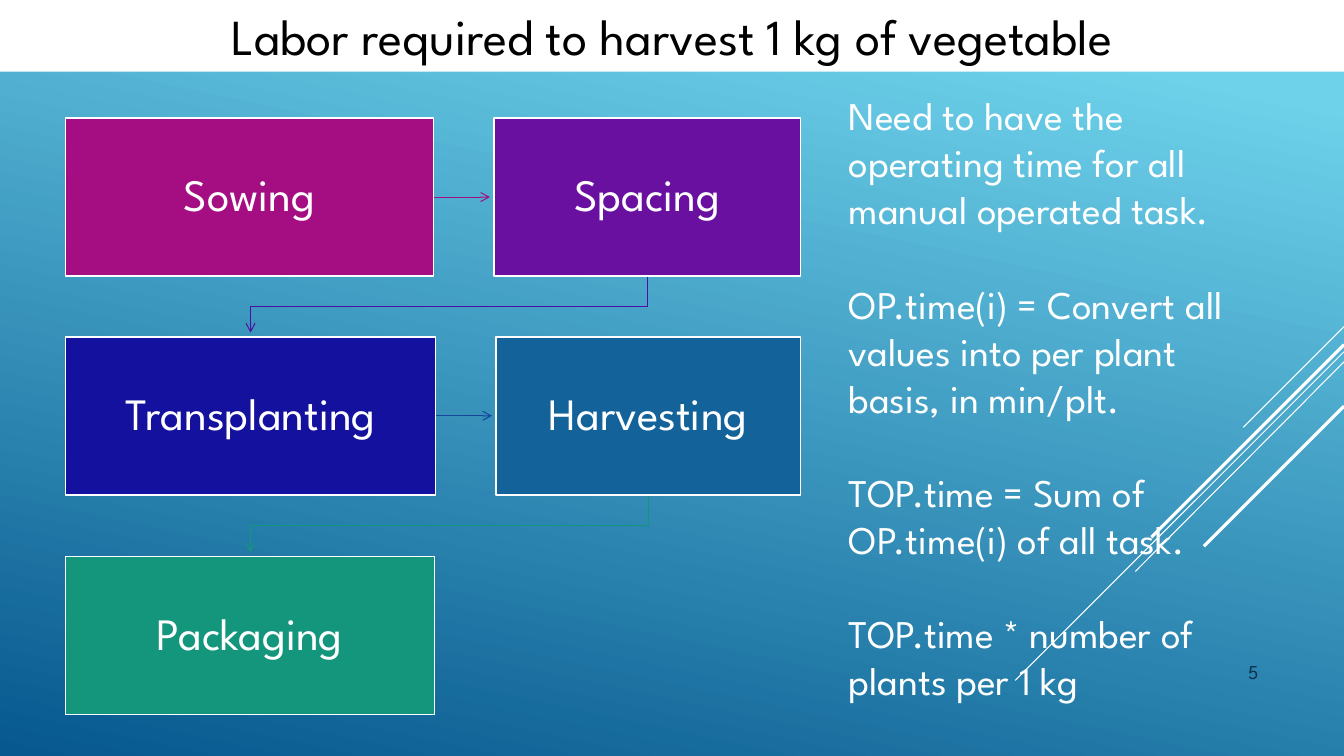
"""Build the slide on labor required to harvest 1 kg of vegetable."""
from dataclasses import dataclass
from itertools import pairwise

import pptx
import pptx.dml.color
import pptx.enum.shapes
import pptx.enum.text
import pptx.oxml
import pptx.oxml.ns
import pptx.util
from pptx.util import Inches

ANCHOR = pptx.enum.text.MSO_ANCHOR
ALIGN = pptx.enum.text.PP_ALIGN


@dataclass(frozen=True)
class Theme:
    font: str = "League Spartan"
    white: str = "FFFFFF"
    black: str = "000000"
    number: str = "0A304A"
    sky: str = "6ED2EB"
    deep: str = "06588E"
    title_size: int = 36
    task_size: int = 32
    method_size: int = 28
    number_size: int = 14
    outline: float = 1.25
    thin: float = 0.75
    thick: float = 2.25


@dataclass(frozen=True)
class Task:
    name: str
    left: float
    top: float
    width: float
    fill: str
    arrow: str = ""
    height: float = 1.57

    @property
    def center(self) -> float:
        return self.left + self.width / 2

    @property
    def right(self) -> float:
        return self.left + self.width

    @property
    def bottom(self) -> float:
        return self.top + self.height


@dataclass(frozen=True)
class Ray:
    start_y: float
    end_x: float
    end_y: float
    weight: float


THEME = Theme()
SLIDE_WIDTH, SLIDE_HEIGHT = 13.33, 7.5
ARROW_GAP = 0.04
TASKS = [
    Task("Sowing", 0.65, 1.17, 3.65, "A50E82", "A50E82"),
    Task("Spacing", 4.9, 1.17, 3.04, "6A10A1", "4D10A0"),
    Task("Transplanting", 0.65, 3.34, 3.67, "13119D", "12479B"),
    Task("Harvesting", 4.92, 3.34, 3.02, "13639A", "14967C"),
    Task("Packaging", 0.65, 5.52, 3.66, "14967C"),
]
RAYS = [
    Ray(3.24, 12.33, 4.24, THEME.thin),
    Ray(3.49, 10.07, 6.75, THEME.thin),
    Ray(3.59, 11.26, 5.67, THEME.thin),
    Ray(3.42, 11.42, 5.33, THEME.thick),
    Ray(4.03, 11.94, 5.42, THEME.thick),
]
METHOD = [
    "Need to have the operating time for all manual operated task.",
    "OP.time(i) = Convert all values into per plant basis, in min/plt.",
    "TOP.time = Sum of OP.time(i) of all task.",
    "TOP.time * number of plants per 1 kg",
]


def rgb(value: str) -> pptx.dml.color.RGBColor:
    """Turn a hex string into a colour."""
    return pptx.dml.color.RGBColor.from_string(value)


def write(shape, lines: list[str], size: int, color: str, align, anchor,
          gap: float = 0) -> None:
    """Fill a shape with formatted paragraphs, gap points apart."""
    frame = shape.text_frame
    frame.text = "\n".join(lines)
    frame.word_wrap = True
    frame.auto_size = pptx.enum.text.MSO_AUTO_SIZE.NONE
    frame.vertical_anchor = anchor
    for index, para in enumerate(frame.paragraphs):
        para.alignment = align
        para.space_before = pptx.util.Pt(gap if index else 0)
        for span in para.runs:
            span.font.name = THEME.font
            span.font.size = pptx.util.Pt(size)
            span.font.color.rgb = rgb(color)


def style_line(shape, color: str, weight: float, arrow: bool = False) -> None:
    """Set a line's colour and weight, drop its shadow and add an arrowhead."""
    shape.line.color.rgb = rgb(color)
    shape.line.width = pptx.util.Pt(weight)
    properties = shape.element.spPr
    if properties.find(pptx.oxml.ns.qn("a:effectLst")) is None:
        properties.append(pptx.oxml.parse_xml(
            f'<a:effectLst {pptx.oxml.ns.nsdecls("a")}/>'))
    if arrow:
        properties.find(pptx.oxml.ns.qn("a:ln")).append(pptx.oxml.parse_xml(
            f'<a:tailEnd {pptx.oxml.ns.nsdecls("a")} type="arrow"/>'))


def add_line(slide, start: tuple[float, float], end: tuple[float, float],
             color: str, weight: float, arrow: bool = False) -> None:
    """Draw a straight line."""
    line = slide.shapes.add_connector(
        pptx.enum.shapes.MSO_CONNECTOR.STRAIGHT,
        *(Inches(value) for value in start + end))
    style_line(line, color, weight, arrow)


def add_arrow(slide, source: Task, target: Task) -> None:
    """Link two tasks, straight within a row and bent between rows."""
    if source.top == target.top:
        middle = source.top + source.height / 2
        add_line(slide, (source.right, middle), (target.left - ARROW_GAP, middle),
                 source.arrow, THEME.thin, True)
        return
    middle = (source.bottom + target.top) / 2
    builder = slide.shapes.build_freeform(Inches(source.center), Inches(source.bottom))
    corners = [(source.center, middle), (target.center, middle),
               (target.center, target.top - ARROW_GAP)]
    builder.add_line_segments([(Inches(x), Inches(y)) for x, y in corners], close=False)
    bend = builder.convert_to_shape()
    bend.fill.background()
    style_line(bend, source.arrow, THEME.thin, True)


def add_task(slide, task: Task) -> None:
    """Draw one task box with its name."""
    box = slide.shapes.add_shape(
        pptx.enum.shapes.MSO_SHAPE.RECTANGLE, Inches(task.left), Inches(task.top),
        Inches(task.width), Inches(task.height))
    box.shadow.inherit = False
    box.fill.solid()
    box.fill.fore_color.rgb = rgb(task.fill)
    style_line(box, THEME.white, THEME.outline)
    write(box, [task.name], THEME.task_size, THEME.white, ALIGN.CENTER, ANCHOR.MIDDLE)
    frame = box.text_frame
    frame.margin_left = frame.margin_right = Inches(0.25)
    frame.margin_top = frame.margin_bottom = Inches(0.25)
    frame.paragraphs[0].line_spacing = 0.9


def add_background(slide) -> None:
    """Paint the slanted gradient background."""
    fill = slide.background.fill
    fill.gradient()
    fill.gradient_angle = 360 - 102
    stops = [(0.1, THEME.sky), (1, THEME.deep)]
    for stop, (position, color) in zip(fill.gradient_stops, stops):
        stop.position = position
        stop.color.rgb = rgb(color)


def add_title(slide) -> None:
    """Place the title on its white band."""
    title = slide.shapes.title
    title.left, title.top = Inches(0), Inches(0)
    title.width, title.height = Inches(SLIDE_WIDTH), Inches(0.71)
    title.fill.solid()
    title.fill.fore_color.rgb = rgb(THEME.white)
    write(title, ["Labor required to harvest 1 kg of vegetable"],
          THEME.title_size, THEME.black, ALIGN.CENTER, ANCHOR.TOP)


def main() -> None:
    """Build and save the deck."""
    deck = pptx.Presentation()
    deck.slide_width, deck.slide_height = Inches(SLIDE_WIDTH), Inches(SLIDE_HEIGHT)
    page = deck.slides.add_slide(deck.slide_layouts[5])
    add_background(page)
    add_title(page)
    for ray in RAYS:
        add_line(page, (SLIDE_WIDTH, ray.start_y), (ray.end_x, ray.end_y),
                 THEME.white, ray.weight)
    number = page.shapes.add_textbox(Inches(11.33), Inches(6.1), Inches(1.25), Inches(0.73))
    write(number, ["5"], THEME.number_size, THEME.number, ALIGN.RIGHT, ANCHOR.BOTTOM)
    for source, target in pairwise(TASKS):
        add_arrow(page, source, target)
    for task in TASKS:
        add_task(page, task)
    method = page.shapes.add_textbox(Inches(8.32), Inches(0.86), Inches(4.45), Inches(6.23))
    write(method, METHOD, THEME.method_size, THEME.white, ALIGN.LEFT, ANCHOR.TOP, gap=33.6)
    deck.save("out.pptx")


if __name__ == "__main__":
    main()
